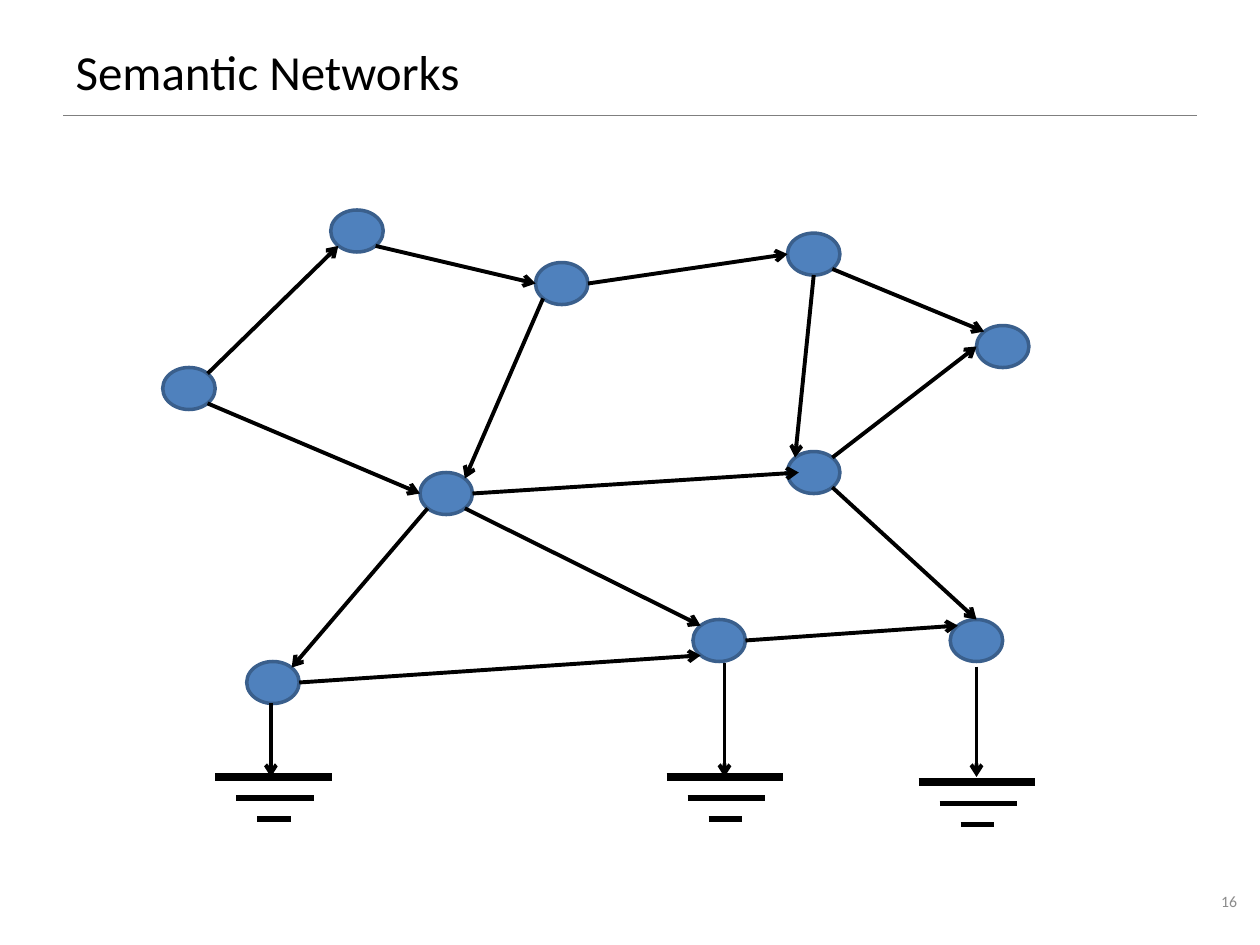
from lxml import etree
from pptx import Presentation
from pptx.dml.color import RGBColor
from pptx.enum.shapes import MSO_CONNECTOR, MSO_SHAPE
from pptx.enum.text import MSO_ANCHOR, PP_ALIGN
from pptx.oxml.ns import qn
from pptx.util import Inches, Pt

LINE, OVAL = MSO_CONNECTOR.STRAIGHT, MSO_SHAPE.OVAL
MID, LEFT, RIGHT = MSO_ANCHOR.MIDDLE, PP_ALIGN.LEFT, PP_ALIGN.RIGHT
BLACK = RGBColor(0x00, 0x00, 0x00)
GREY = RGBColor(0x8C, 0x8C, 0x8C)
RULE = RGBColor(0x7F, 0x7F, 0x7F)
BLUE = RGBColor(0x4F, 0x81, 0xBD)
EDGE = RGBColor(0x3A, 0x5F, 0x8C)
FONT = "Calibri"
COLS, ROWS = 120, 90
WIDE, HIGH = 5, 4

NODES = {
    "a": (15.5, 35), "b": (31.5, 20), "c": (40, 45), "d": (90.5, 59),
    "e": (93, 31), "f": (23.5, 63), "g": (66, 59), "h": (51, 25),
    "i": (75, 43), "j": (75, 22.2),
}
PORTS = {
    "n": (0, -1), "s": (0, 1), "e": (1, 0), "w": (-1, 0), "in": (-0.57, 0),
    "ne": (0.71, -0.71), "nw": (-0.71, -0.71),
    "se": (0.71, 0.71), "sw": (-0.71, 0.71),
}
LINKS = [
    ("b", "se", "h", "w"), ("c", "sw", "f", "ne"), ("a", "se", "c", "w"),
    ("f", "e", "g", "sw"), ("c", "se", "g", "nw"), ("i", "se", "d", "n"),
    ("g", "e", "d", "nw"), ("c", "e", "i", "in"), ("h", "e", "j", "w"),
    ("i", "ne", "e", "w"), ("h", "sw", "c", "ne"), ("a", "ne", "b", "sw"),
    ("j", "se", "e", "nw"), ("j", "s", "i", "nw"),
]
DROPS = [(25.8, 67), (69, 63.1), (93, 63.5)]
GROUNDS = [(20.5, 74), (63.5, 74), (87.5, 74.5)]
BARS = [(11.1, 4.5), (7.4, 3), (3.2, 3)]


class Deck:
    """Holds the style and the current slide, measured in grid columns and rows."""

    def __init__(self):
        self.prs = Presentation()
        self.prs.slide_width, self.prs.slide_height = Inches(10), Inches(7.5)
        self.slide = self.prs.slides.add_slide(self.prs.slide_layouts[5])

    def x(self, col):
        return round(self.prs.slide_width * col / COLS)

    def y(self, row):
        return round(self.prs.slide_height * row / ROWS)

    def box(self, col, row, wide, high):
        return self.x(col), self.y(row), self.x(wide), self.y(high)

    def text(self, shape, words, size, color, align):
        frame = shape.text_frame
        frame.word_wrap, frame.vertical_anchor = True, MID
        para = frame.paragraphs[0]
        para.alignment = align
        run = para.add_run()
        run.text = words
        run.font.name, run.font.size = FONT, Pt(size)
        run.font.color.rgb = color

    def title(self, words, *area):
        shape = self.slide.shapes.title
        shape.left, shape.top, shape.width, shape.height = self.box(*area)
        self.text(shape, words, 28, BLACK, LEFT)

    def label(self, words, *area):
        shape = self.slide.shapes.add_textbox(*self.box(*area))
        self.text(shape, words, 9, GREY, RIGHT)

    def node(self, col, row):
        shape = self.slide.shapes.add_shape(OVAL, *self.box(col, row, WIDE, HIGH))
        shape.shadow.inherit = False
        shape.fill.solid()
        shape.fill.fore_color.rgb = BLUE
        shape.line.color.rgb, shape.line.width = EDGE, Pt(2)

    def line(self, start, end, width, color=BLACK):
        (c1, r1), (c2, r2) = start, end
        link = self.slide.shapes.add_connector(
            LINE, self.x(c1), self.y(r1), self.x(c2), self.y(r2))
        link.line.color.rgb, link.line.width = color, Pt(width)
        etree.SubElement(link._element.spPr, qn("a:effectLst"))
        return link

    def arrow(self, start, end):
        link = self.line(start, end, 2.25)
        edge = link._element.spPr.find(qn("a:ln"))
        etree.SubElement(edge, qn("a:tailEnd"), type="arrow")

    def ground(self, col, row):
        for step, (wide, width) in enumerate(BARS):
            left, top = col + 2 * step, row + 2 * step
            self.line((left, top), (left + wide, top), width)


def port(name, side):
    (col, row), (dx, dy) = NODES[name], PORTS[side]
    return col + WIDE / 2 * (1 + dx), row + HIGH / 2 * (1 + dy)


def main():
    deck = Deck()
    deck.line((6, 11), (114, 11), 0.75, RULE)
    deck.title("Semantic Networks", 6, 3, 108, 7.5)
    for spot in NODES.values():
        deck.node(*spot)
    for tail, start, head, end in LINKS:
        deck.arrow(port(tail, start), port(head, end))
    for col, row in DROPS:
        deck.arrow((col, row), (col, 74))
    for spot in GROUNDS:
        deck.ground(*spot)
    deck.label("16", 114, 83.4, 5, 4.8)
    deck.prs.save("out.pptx")


if __name__ == "__main__":
    main()
